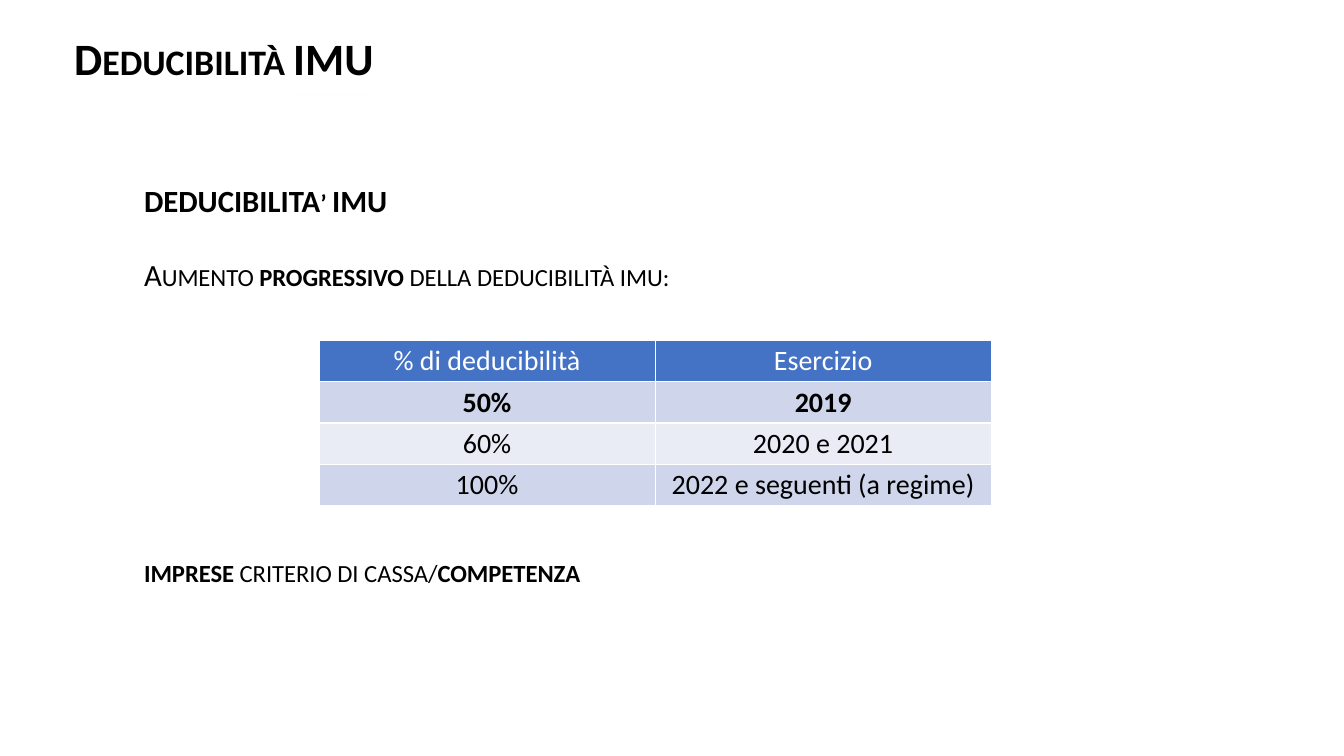
from lxml import etree
from pptx import Presentation
from pptx.dml.color import RGBColor
from pptx.enum.shapes import MSO_CONNECTOR
from pptx.enum.text import MSO_ANCHOR, PP_ALIGN
from pptx.oxml.ns import qn
from pptx.util import Cm, Pt

CENTER = PP_ALIGN.CENTER
JUSTIFY = PP_ALIGN.JUSTIFY
LEFT = PP_ALIGN.LEFT
TOP = MSO_ANCHOR.TOP
STRAIGHT = MSO_CONNECTOR.STRAIGHT

BLACK = RGBColor(0x00, 0x00, 0x00)
WHITE = RGBColor(0xFF, 0xFF, 0xFF)
RULE_WHITE = RGBColor(0xFB, 0xFF, 0xFF)
HEADER_BLUE = RGBColor(0x44, 0x72, 0xC4)
BAND_DARK = RGBColor(0xCF, 0xD5, 0xEA)
BAND_LIGHT = RGBColor(0xE9, 0xEB, 0xF5)

FONT = "Calibri"
TITLE_SIZE = 32
BODY_SIZE = 22
TABLE_SIZE = 20

TITLE = [(LEFT, 0, [("Deducibilità IMU", True)])]
# Each paragraph: alignment, points of space above it, (text, bold) runs
BODY = [
    (LEFT, 0, [("DEDUCIBILITA’ IMU", True)]),
    (JUSTIFY, 26.8, [("Aumento ", False), ("progressivo", True),
                     (" della deducibilità imu:", False)]),
    (JUSTIFY, 185, [("imprese", True), (" criterio di cassa/", False),
                    ("competenza", True)]),
]
RATES = [
    ("% di deducibilità", "Esercizio"),
    ("50%", "2019"),
    ("60%", "2020 e 2021"),
    ("100%", "2022 e seguenti (a regime)"),
]
CURRENT_ROW = 1


def add_run(paragraph, text, size, color=BLACK, bold=False, small_caps=False):
    run = paragraph.add_run()
    run.text = text
    font = run.font
    font.name = FONT
    font.size = Pt(size)
    font.bold = bold
    font.color.rgb = color
    if small_caps:
        font._element.set("cap", "small")


def add_small_caps_text(slide, left, top, width, height, size, paragraphs):
    box = slide.shapes.add_textbox(Cm(left), Cm(top), Cm(width), Cm(height))
    frame = box.text_frame
    frame.word_wrap = True
    frame.vertical_anchor = TOP
    for index, (alignment, space_above, runs) in enumerate(paragraphs):
        paragraph = frame.add_paragraph() if index else frame.paragraphs[0]
        paragraph.alignment = alignment
        paragraph.space_before = Pt(space_above)
        for text, bold in runs:
            add_run(paragraph, text, size, bold=bold, small_caps=True)


def add_rule(slide, left, top, width):
    rule = slide.shapes.add_connector(
        STRAIGHT, Cm(left), Cm(top), Cm(left + width), Cm(top))
    rule.line.color.rgb = RULE_WHITE
    rule.line.width = Pt(0)
    etree.SubElement(rule._element.spPr, qn("a:effectLst"))


def set_borders(cell):
    """Draw white 1 pt borders on all four sides."""
    properties = cell._tc.get_or_add_tcPr()
    for position, tag in enumerate(("a:lnL", "a:lnR", "a:lnT", "a:lnB")):
        border = etree.Element(qn(tag), w=str(Pt(1)))
        fill = etree.SubElement(border, qn("a:solidFill"))
        etree.SubElement(fill, qn("a:srgbClr"), val=str(WHITE))
        properties.insert(position, border)


def fill_cell(cell, text, row):
    is_header = row == 0
    cell.margin_left = cell.margin_right = Cm(0.18)
    cell.margin_top = cell.margin_bottom = Cm(0.09)
    cell.fill.solid()
    band = BAND_DARK if row % 2 else BAND_LIGHT
    cell.fill.fore_color.rgb = HEADER_BLUE if is_header else band
    paragraph = cell.text_frame.paragraphs[0]
    paragraph.alignment = CENTER
    add_run(paragraph, text, TABLE_SIZE, WHITE if is_header else BLACK,
            bold=row == CURRENT_ROW)
    set_borders(cell)


def add_rate_table(slide, left, top, column_width, row_height):
    row_count, column_count = len(RATES), len(RATES[0])
    table = slide.shapes.add_table(
        row_count, column_count, Cm(left), Cm(top),
        Cm(column_width * column_count), Cm(row_height * row_count)).table
    for row, texts in enumerate(RATES):
        for column, text in enumerate(texts):
            fill_cell(table.cell(row, column), text, row)


def main():
    presentation = Presentation()
    presentation.slide_width = Cm(33.87)
    presentation.slide_height = Cm(19.05)
    slide = presentation.slides.add_slide(presentation.slide_layouts[6])

    add_rule(slide, 7.42, 2.39, 1.9)
    add_small_caps_text(slide, 3.38, 4.45, 25.2, 11.53, BODY_SIZE, BODY)
    add_rate_table(slide, 8.04, 8.58, 8.47, 1.04)
    add_small_caps_text(slide, 1.62, 0.64, 30.99, 1.37, TITLE_SIZE, TITLE)

    presentation.save("out.pptx")


if __name__ == "__main__":
    main()
